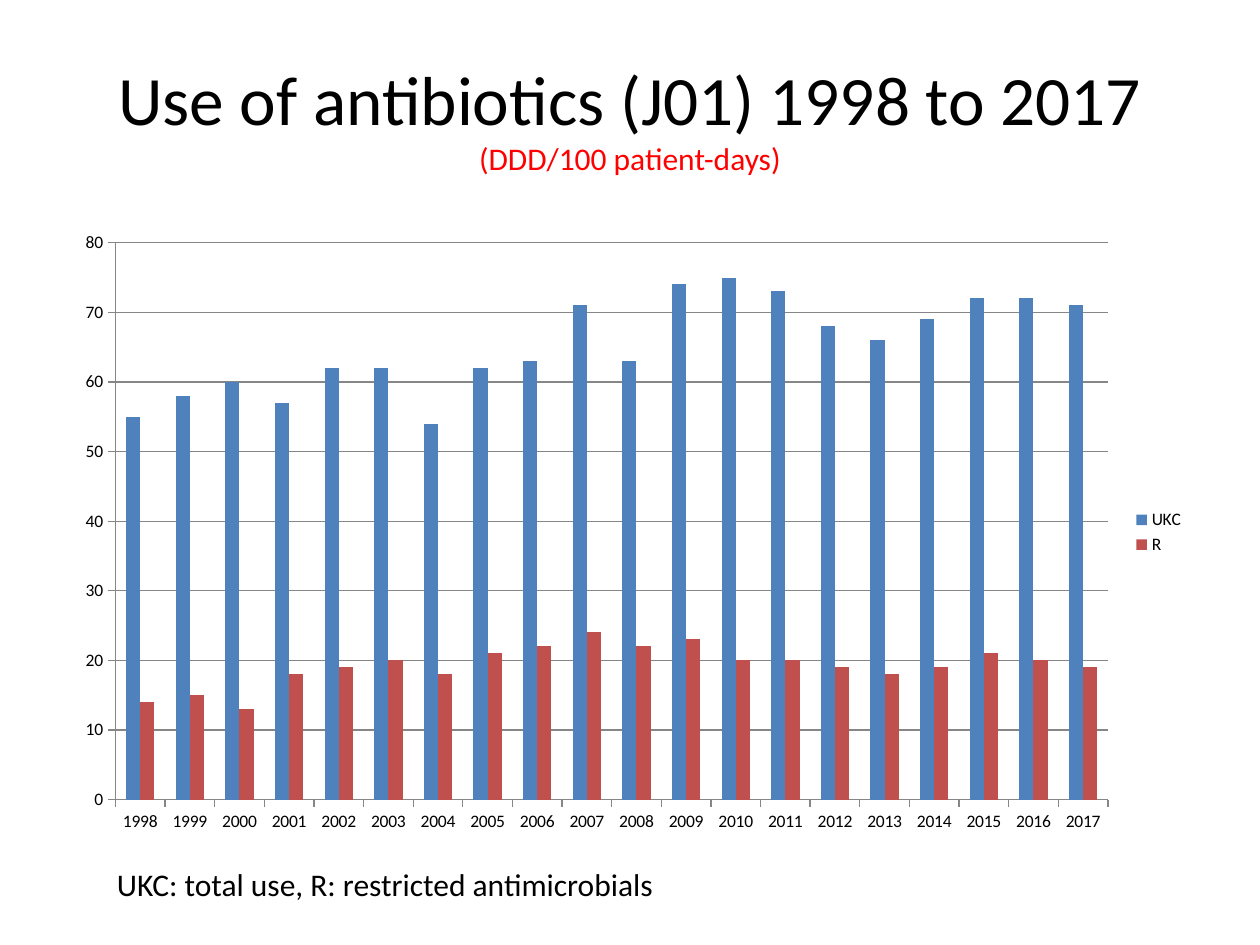
from pptx import Presentation
from pptx import util as u
from pptx.chart.data import CategoryChartData
from pptx.dml.color import RGBColor
from pptx.enum import chart as charts, text

BLACK = RGBColor(0x00, 0x00, 0x00)
RED = RGBColor(0xFF, 0x00, 0x00)
GRAY = RGBColor(0x86, 0x86, 0x86)
BLUE = RGBColor(0x4F, 0x81, 0xBD)
BRICK = RGBColor(0xC0, 0x50, 0x4D)

YEARS = [str(year) for year in range(1998, 2018)]
TOTAL_USE = [55, 58, 60, 57, 62, 62, 54, 62, 63, 71,
             63, 74, 75, 73, 68, 66, 69, 72, 72, 71]
RESTRICTED_USE = [14, 15, 13, 18, 19, 20, 18, 21, 22, 24,
                  22, 23, 20, 20, 19, 18, 19, 21, 20, 19]


class SlideBuilder:
    font_name = "Calibri"

    def __init__(self, slide):
        self.slide = slide

    def style_font(self, font, size, color):
        font.name = self.font_name
        font.size = u.Pt(size)
        font.color.rgb = color

    def add_text(self, box, runs, alignment, anchor):
        shape = self.slide.shapes.add_textbox(*map(u.Inches, box))
        frame = shape.text_frame
        frame.word_wrap = True
        frame.vertical_anchor = anchor
        paragraph = frame.paragraphs[0]
        paragraph.alignment = alignment
        for content, size, color in runs:
            run = paragraph.add_run()
            run.text = content
            self.style_font(run.font, size, color)

    def style_axis(self, axis):
        axis.major_tick_mark = charts.XL_TICK_MARK.OUTSIDE
        axis.minor_tick_mark = charts.XL_TICK_MARK.NONE
        axis.format.line.color.rgb = GRAY
        axis.format.line.width = u.Pt(0.75)

    def add_column_chart(self, box, categories, series):
        data = CategoryChartData(number_format="0")
        data.categories = categories
        for name, values, color in series:
            data.add_series(name, values)
        chart = self.slide.shapes.add_chart(
            charts.XL_CHART_TYPE.COLUMN_CLUSTERED, *map(u.Inches, box), data
        ).chart
        chart.has_title = False
        self.style_font(chart.font, 10, BLACK)
        chart.has_legend = True
        chart.legend.position = charts.XL_LEGEND_POSITION.RIGHT
        chart.legend.include_in_layout = False

        plot = chart.plots[0]
        plot.gap_width = 150
        plot.overlap = 0
        plot.vary_by_categories = False
        for column, (name, values, color) in zip(plot.series, series):
            column.format.fill.solid()
            column.format.fill.fore_color.rgb = color
            column.invert_if_negative = False

        self.style_axis(chart.category_axis)
        axis = chart.value_axis
        self.style_axis(axis)
        axis.minimum_scale = 0
        axis.maximum_scale = 80
        axis.major_unit = 10
        axis.tick_labels.number_format = "0"
        axis.tick_labels.number_format_is_linked = False
        axis.has_major_gridlines = True
        axis.major_gridlines.format.line.color.rgb = GRAY
        axis.major_gridlines.format.line.width = u.Pt(0.75)


def main():
    presentation = Presentation()
    presentation.slide_width = u.Inches(10)
    presentation.slide_height = u.Inches(7.5)
    builder = SlideBuilder(
        presentation.slides.add_slide(presentation.slide_layouts[6]))

    builder.add_text(
        (0.5, 0.3, 9, 1.25),
        [("Use of antibiotics (J01) 1998 to 2017 ", 39.6, BLACK),
         ("(DDD/100 patient-days)", 18, RED)],
        text.PP_ALIGN.CENTER, text.MSO_ANCHOR.MIDDLE)
    builder.add_column_chart(
        (0.5, 1.75, 9, 4.95), YEARS,
        [("UKC", TOTAL_USE, BLUE), ("R", RESTRICTED_USE, BRICK)])
    builder.add_text(
        (0.83, 6.82, 7.4, 0.4),
        [("UKC: total use, R: restricted antimicrobials", 18, BLACK)],
        text.PP_ALIGN.LEFT, text.MSO_ANCHOR.TOP)

    presentation.save("out.pptx")


if __name__ == "__main__":
    main()
